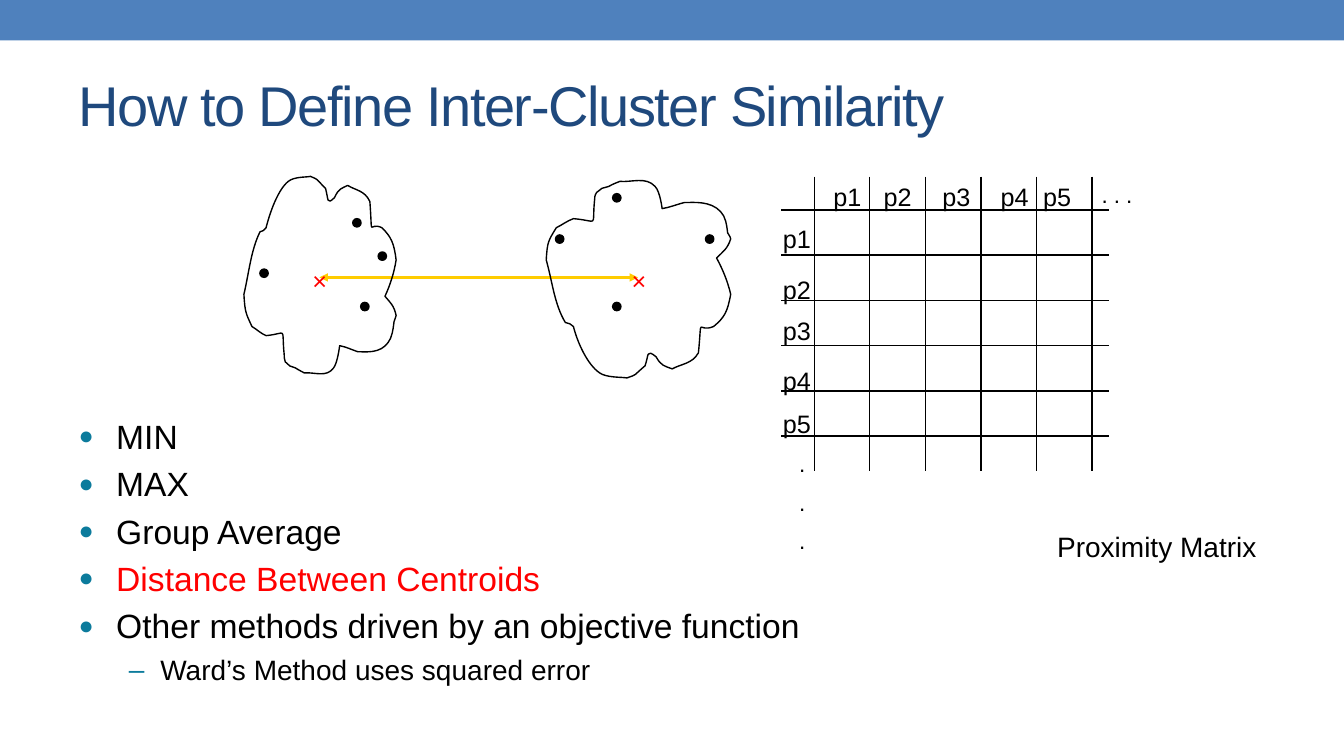
from dataclasses import dataclass

import lxml.etree
import pptx
import pptx.dml.color
import pptx.enum.shapes
import pptx.enum.text
import pptx.oxml.ns
import pptx.util

Cm = pptx.util.Cm
Pt = pptx.util.Pt
qn = pptx.oxml.ns.qn

FONT = "Arial"
COLOURS = {
    "bar": "4F81BD", "title": "1F497D", "ink": "000000",
    "accent": "FF0000", "arrow": "FFCC00", "bullet": "0C7B9C",
}


@dataclass
class Label:
    text: str
    left: float
    top: float
    width: float = 1.47
    height: float = 1.02
    size: int = 18
    colour: str = "ink"


@dataclass
class Bullet:
    text: str
    colour: str = "ink"
    level: int = 0


@dataclass
class BulletStyle:
    char: str
    size: int
    margin: float
    hang: float
    percent: int


BULLET_STYLES = [BulletStyle("●", 24, 0.95, 0.95, 75), BulletStyle("–", 20, 2.06, 0.79, 100)]
BULLETS = [
    Bullet("MIN"),
    Bullet("MAX"),
    Bullet("Group Average"),
    Bullet("Distance Between Centroids", "accent"),
    Bullet("Other methods driven by an objective function"),
    Bullet("Ward’s Method uses squared error", level=1),
]

# Cluster outline in hundredths of an inch: start, then two controls and an end per curve
OUTLINE_UNIT = Cm(2.54) / 100
OUTLINE = [
    (258, 230),
    (249, 248), (247, 271), (242, 292), (243, 310), (244, 311), (250, 324),
    (255, 327), (259, 331), (264, 333), (286, 331), (279, 323), (282, 352),
    (282, 354), (282, 356), (283, 359), (290, 365), (285, 362), (293, 365),
    (296, 367), (302, 370), (302, 370), (312, 369), (324, 375), (331, 365),
    (335, 360), (337, 343), (337, 343), (343, 344), (349, 347), (355, 349),
    (363, 349), (377, 351), (385, 340), (389, 335), (390, 327), (391, 319),
    (392, 317), (393, 313), (393, 313), (391, 303), (387, 300), (382, 294),
    (387, 283), (391, 271), (393, 258), (391, 241), (388, 235), (379, 226),
    (365, 219), (370, 240), (367, 200), (362, 189), (353, 189), (345, 184),
    (339, 187), (336, 187), (332, 196), (324, 204), (326, 198), (323, 187),
    (312, 176), (317, 179), (308, 175), (305, 176), (292, 175), (286, 180),
    (276, 188), (268, 210), (264, 226), (263, 229), (260, 229), (258, 230),
]
# The second cluster is the same outline turned upside down and widened
FLIPPED_OUTLINE = [(542 + (x - 242) * 1.21, 550 - y) for x, y in OUTLINE]

POINTS = [
    (9.09, 7.62), (8.89, 5.51), (6.55, 6.78), (9.53, 6.35),
    (17.78, 5.92), (14.0, 5.92), (15.44, 7.62), (15.44, 4.88),
]
POINT_SIZE = 0.21

COLUMN_LEFTS = [20.75, 22.02, 23.5, 24.97, 26.04]
ROW_TOPS = [5.51, 6.78, 7.82, 9.09, 10.16]
MATRIX_LEFT, MATRIX_TOP, MATRIX_RIGHT, MATRIX_BOTTOM = 19.69, 4.45, 27.94, 11.86
FIRST_COLUMN, COLUMN_STEP = 20.52, 1.4
FIRST_ROW, ROW_STEP = 5.29, 1.14


def rgb(name: str) -> pptx.dml.color.RGBColor:
    return pptx.dml.color.RGBColor.from_string(COLOURS[name])


def add_run(paragraph, text: str, size: int, colour: str):
    run = paragraph.add_run()
    run.text = text
    run.font.name = FONT
    run.font.size = Pt(size)
    run.font.color.rgb = rgb(colour)
    return run


def add_line(slide, x1: float, y1: float, x2: float, y2: float,
             colour: str = "ink", width: float = 1, arrows: bool = False) -> None:
    line = slide.shapes.add_connector(
        pptx.enum.shapes.MSO_CONNECTOR.STRAIGHT, Cm(x1), Cm(y1), Cm(x2), Cm(y2))
    line.line.color.rgb = rgb(colour)
    line.line.width = Pt(width)
    properties = line._element.spPr
    if arrows:
        for end in ("a:headEnd", "a:tailEnd"):
            lxml.etree.SubElement(properties.find(qn("a:ln")), qn(end), type="triangle")
    lxml.etree.SubElement(properties, qn("a:effectLst"))


def add_cluster(slide, outline: list) -> None:
    builder = slide.shapes.build_freeform(*outline[0], scale=OUTLINE_UNIT)
    builder.add_line_segments(outline[1:], close=True)
    cluster = builder.convert_to_shape()
    cluster.shadow.inherit = False
    cluster.fill.background()
    cluster.line.color.rgb = rgb("ink")
    cluster.line.width = Pt(1)
    # Merge every three segments into one Bézier curve
    segments = list(cluster._element.iter(qn("a:lnTo")))
    for start in range(0, len(segments), 3):
        curve = lxml.etree.Element(qn("a:cubicBezTo"))
        segments[start].addprevious(curve)
        for segment in segments[start:start + 3]:
            curve.append(segment[0])
            segment.getparent().remove(segment)


def add_solid(slide, kind, left: float, top: float, width: float, height: float,
              colour: str, outlined: bool = False) -> None:
    solid = slide.shapes.add_shape(kind, Cm(left), Cm(top), Cm(width), Cm(height))
    solid.shadow.inherit = False
    solid.fill.solid()
    solid.fill.fore_color.rgb = rgb(colour)
    if outlined:
        solid.line.color.rgb = rgb(colour)
        solid.line.width = Pt(1)
    else:
        solid.line.fill.background()


def add_label(slide, label: Label) -> None:
    frame = slide.shapes.add_textbox(
        Cm(label.left), Cm(label.top), Cm(label.width), Cm(label.height)).text_frame
    frame.word_wrap = True
    for index, text in enumerate(label.text.split("\n")):
        paragraph = frame.add_paragraph() if index else frame.paragraphs[0]
        if index:
            paragraph.space_before = Pt(label.size / 2)
        add_run(paragraph, text, label.size, label.colour)


def add_bullets(slide, bullets: list) -> None:
    frame = slide.shapes.add_textbox(Cm(1.73), Cm(10.36), Cm(19.66), Cm(8.69)).text_frame
    frame.word_wrap = True
    for index, bullet in enumerate(bullets):
        style = BULLET_STYLES[bullet.level]
        paragraph = frame.add_paragraph() if index else frame.paragraphs[0]
        paragraph.level = bullet.level
        paragraph.space_before = paragraph.space_after = Pt(2.5)
        add_run(paragraph, bullet.text, style.size, bullet.colour)
        properties = paragraph._p.get_or_add_pPr()
        properties.set("marL", str(Cm(style.margin)))
        properties.set("indent", str(-Cm(style.hang)))
        colour = lxml.etree.SubElement(properties, qn("a:buClr"))
        lxml.etree.SubElement(colour, qn("a:srgbClr"), val=COLOURS["bullet"])
        lxml.etree.SubElement(properties, qn("a:buSzPct"), val=str(style.percent * 1000))
        lxml.etree.SubElement(properties, qn("a:buFont"), typeface=FONT)
        lxml.etree.SubElement(properties, qn("a:buChar"), char=style.char)


def main() -> None:
    deck = pptx.Presentation()
    deck.slide_width, deck.slide_height = Cm(33.87), Cm(19.05)
    slide = deck.slides.add_slide(deck.slide_layouts.get_by_name("Title Only"))
    shape_kinds = pptx.enum.shapes.MSO_SHAPE

    # Top bar and title
    add_solid(slide, shape_kinds.RECTANGLE, 0, 0, 33.87, 1.02, "bar")
    title = slide.shapes.title
    title.left, title.top, title.width, title.height = Cm(1.73), Cm(0.94), Cm(23.01), Cm(3.38)
    title.text_frame.vertical_anchor = pptx.enum.text.MSO_ANCHOR.MIDDLE
    heading = title.text_frame.paragraphs[0]
    heading.alignment = pptx.enum.text.PP_ALIGN.LEFT
    heading_run = add_run(heading, "How to Define Inter-Cluster Similarity", 40, "title")
    heading_run.font._element.set("spc", "-100")

    # Clusters, their points and the distance between centroids
    add_line(slide, 8.05, 6.99, 16.08, 6.99, "arrow", 2, arrows=True)
    for outline in (OUTLINE, FLIPPED_OUTLINE):
        add_cluster(slide, outline)
    for left, top in POINTS:
        add_solid(slide, shape_kinds.OVAL, left, top, POINT_SIZE, POINT_SIZE, "ink", outlined=True)
    for left in (7.62, 15.67):
        add_label(slide, Label("×", left, 6.55, width=0.64, colour="accent"))

    # Proximity matrix
    for index in range(6):
        x = FIRST_COLUMN + index * COLUMN_STEP
        y = FIRST_ROW + index * ROW_STEP
        add_line(slide, x, MATRIX_TOP, x, MATRIX_BOTTOM)
        add_line(slide, MATRIX_LEFT, y, MATRIX_RIGHT, y)
    for number, (left, top) in enumerate(zip(COLUMN_LEFTS, ROW_TOPS), start=1):
        add_label(slide, Label(f"p{number}", left, MATRIX_TOP))
        add_label(slide, Label(f"p{number}", 19.48, top))
    add_label(slide, Label(". . .", 27.51, MATRIX_TOP, height=0.94, size=16))
    add_label(slide, Label(".\n.\n.", 19.89, 11.23, height=2.97, size=16))
    add_label(slide, Label("Proximity Matrix", 26.39, 13.21, 6.99, 1.09, 20))

    # Ways to define similarity
    add_bullets(slide, BULLETS)
    deck.save("out.pptx")


if __name__ == "__main__":
    main()
